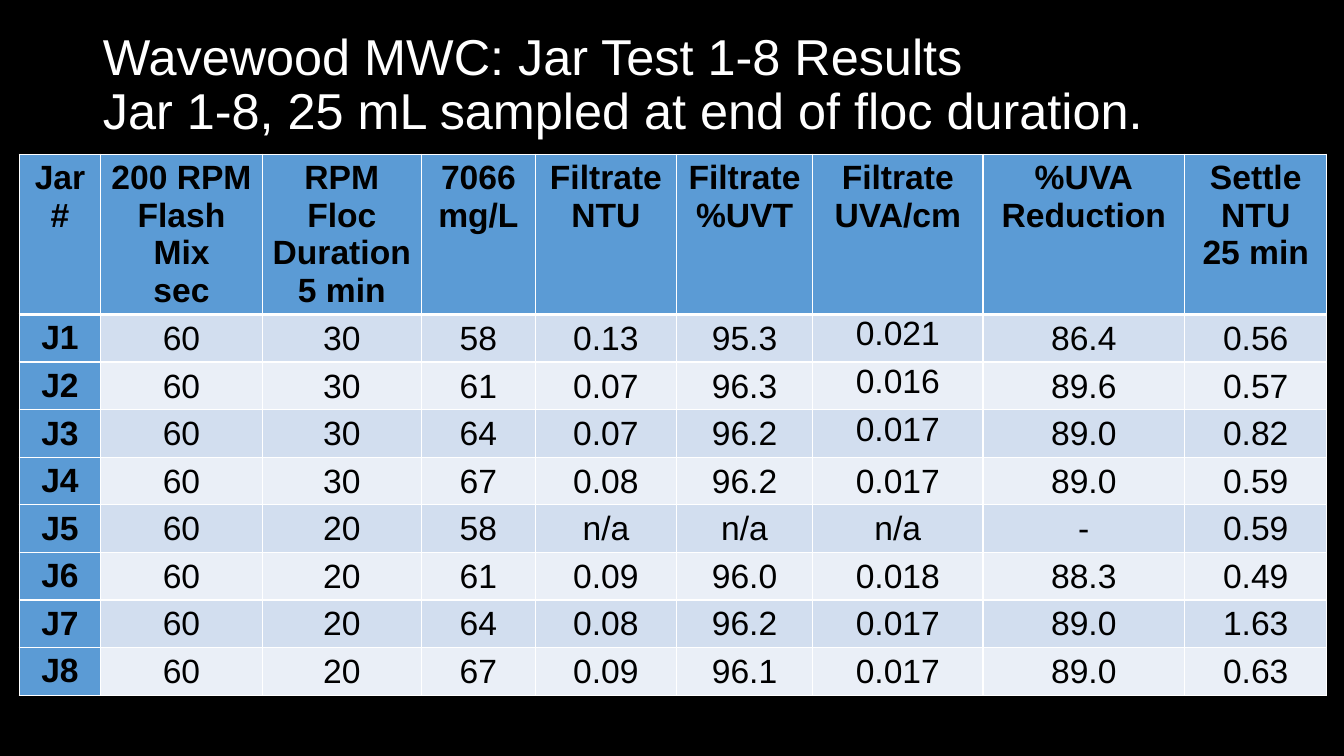
from copy import deepcopy
from dataclasses import dataclass

from pptx import Presentation
from pptx.dml.color import RGBColor as RGB
from pptx.enum.text import MSO_ANCHOR as ANCHOR, MSO_AUTO_SIZE as AUTOSIZE, PP_ALIGN as ALIGN
from pptx.oxml import parse_xml
from pptx.oxml.ns import nsdecls, qn
from pptx.util import Inches, Pt


@dataclass(frozen=True)
class Theme:
    font: str = "Arial"
    background: str = "000000"
    title: str = "FFFFFF"
    text: str = "000000"
    header: str = "5B9BD5"
    bands: tuple = ("D2DEEF", "EAEFF7")
    border: str = "FFFFFF"
    title_size: int = 36
    table_size: int = 24


THEME = Theme()

TITLE = "Wavewood MWC: Jar Test 1-8 Results\vJar 1-8, 25 mL sampled at end of floc duration."
HEADERS = ["Jar\n#", "200 RPM\nFlash\nMix\nsec", "RPM\nFloc\nDuration\n5 min",
           "7066\nmg/L", "Filtrate\nNTU", "Filtrate\n%UVT", "Filtrate\nUVA/cm",
           "%UVA\nReduction", "Settle\nNTU\n25 min"]
RESULTS = [
    ["J1", "60", "30", "58", "0.13", "95.3", "0.021", "86.4", "0.56"],
    ["J2", "60", "30", "61", "0.07", "96.3", "0.016", "89.6", "0.57"],
    ["J3", "60", "30", "64", "0.07", "96.2", "0.017", "89.0", "0.82"],
    ["J4", "60", "30", "67", "0.08", "96.2", "0.017", "89.0", "0.59"],
    ["J5", "60", "20", "58", "n/a", "n/a", "n/a", "-", "0.59"],
    ["J6", "60", "20", "61", "0.09", "96.0", "0.018", "88.3", "0.49"],
    ["J7", "60", "20", "64", "0.08", "96.2", "0.017", "89.0", "1.63"],
    ["J8", "60", "20", "67", "0.09", "96.1", "0.017", "89.0", "0.63"],
]
COLUMN_WIDTHS = [0.81, 1.6, 1.58, 1.13, 1.4, 1.35, 1.69, 2, 1.41]
HEADER_HEIGHT, ROW_HEIGHT = 1.59, 0.47
UVA_COLUMN, TOP_UVA_ROWS = 6, (1, 2, 3)


def set_attrs(obj, values):
    for name, value in values.items():
        setattr(obj, name, value)


def format_text(tf, size, color, bold, align):
    for p in tf.paragraphs:
        p.alignment = align
        for r in p.runs:
            set_attrs(r.font, {"name": THEME.font, "size": Pt(size), "bold": bold})
            r.font.color.rgb = RGB.from_string(color)


def add_title(slide, text):
    sp = slide.shapes.title
    set_attrs(sp, {"left": Inches(0.92), "top": Inches(0.13),
                   "width": Inches(11.5), "height": Inches(1.45)})
    tf = sp.text_frame
    tf.text = text
    set_attrs(tf, {"word_wrap": True, "auto_size": AUTOSIZE.NONE,
                   "vertical_anchor": ANCHOR.MIDDLE})
    format_text(tf, THEME.title_size, THEME.title, False, ALIGN.LEFT)
    p = tf.paragraphs[0]
    p.line_spacing = 0.9
    # The line break takes the same type size as the text
    for br in p._p.findall(qn("a:br")):
        br.insert(0, deepcopy(p.runs[0]._r.rPr))


def set_borders(cell, bottom):
    tc_pr = cell._tc.get_or_add_tcPr()
    widths = {"lnL": 1, "lnR": 1, "lnT": 1, "lnB": bottom}
    for i, (side, width) in enumerate(widths.items()):
        tc_pr.insert(i, parse_xml(
            f'<a:{side} {nsdecls("a")} w="{Pt(width)}"><a:solidFill>'
            f'<a:srgbClr val="{THEME.border}"/></a:solidFill></a:{side}>'))


def fill_cell(cell, text, row, col):
    is_header, is_label = row == 0, row == 0 or col == 0
    cell.text = text
    format_text(cell.text_frame, THEME.table_size, THEME.text, is_label, ALIGN.CENTER)
    cell.fill.solid()
    color = THEME.header if is_label else THEME.bands[(row - 1) % 2]
    cell.fill.fore_color.rgb = RGB.from_string(color)
    if not is_label:
        at_top = col == UVA_COLUMN and row in TOP_UVA_ROWS
        set_attrs(cell, {"margin_left": Inches(0.01), "margin_right": Inches(0.01),
                         "margin_top": Inches(0.01), "margin_bottom": Inches(0),
                         "vertical_anchor": ANCHOR.TOP if at_top else ANCHOR.MIDDLE})
    set_borders(cell, 3 if is_header else 1)


def add_results_table(slide, rows):
    heights = [HEADER_HEIGHT] + [ROW_HEIGHT] * (len(rows) - 1)
    table = slide.shapes.add_table(
        len(rows), len(COLUMN_WIDTHS), Inches(0.19), Inches(1.53),
        Inches(sum(COLUMN_WIDTHS)), Inches(sum(heights))).table
    set_attrs(table, {"first_row": False, "horz_banding": False})
    for column, width in zip(table.columns, COLUMN_WIDTHS):
        column.width = Inches(width)
    for i, (values, height) in enumerate(zip(rows, heights)):
        table.rows[i].height = Inches(height)
        for j, text in enumerate(values):
            fill_cell(table.cell(i, j), text, i, j)


def main():
    prs = Presentation()
    set_attrs(prs, {"slide_width": Inches(13.33), "slide_height": Inches(7.5)})
    slide = prs.slides.add_slide(prs.slide_layouts[5])

    # Background
    slide.background.fill.solid()
    slide.background.fill.fore_color.rgb = RGB.from_string(THEME.background)

    # Title and jar test results
    add_title(slide, TITLE)
    add_results_table(slide, [HEADERS] + RESULTS)
    prs.save("out.pptx")


if __name__ == "__main__":
    main()
